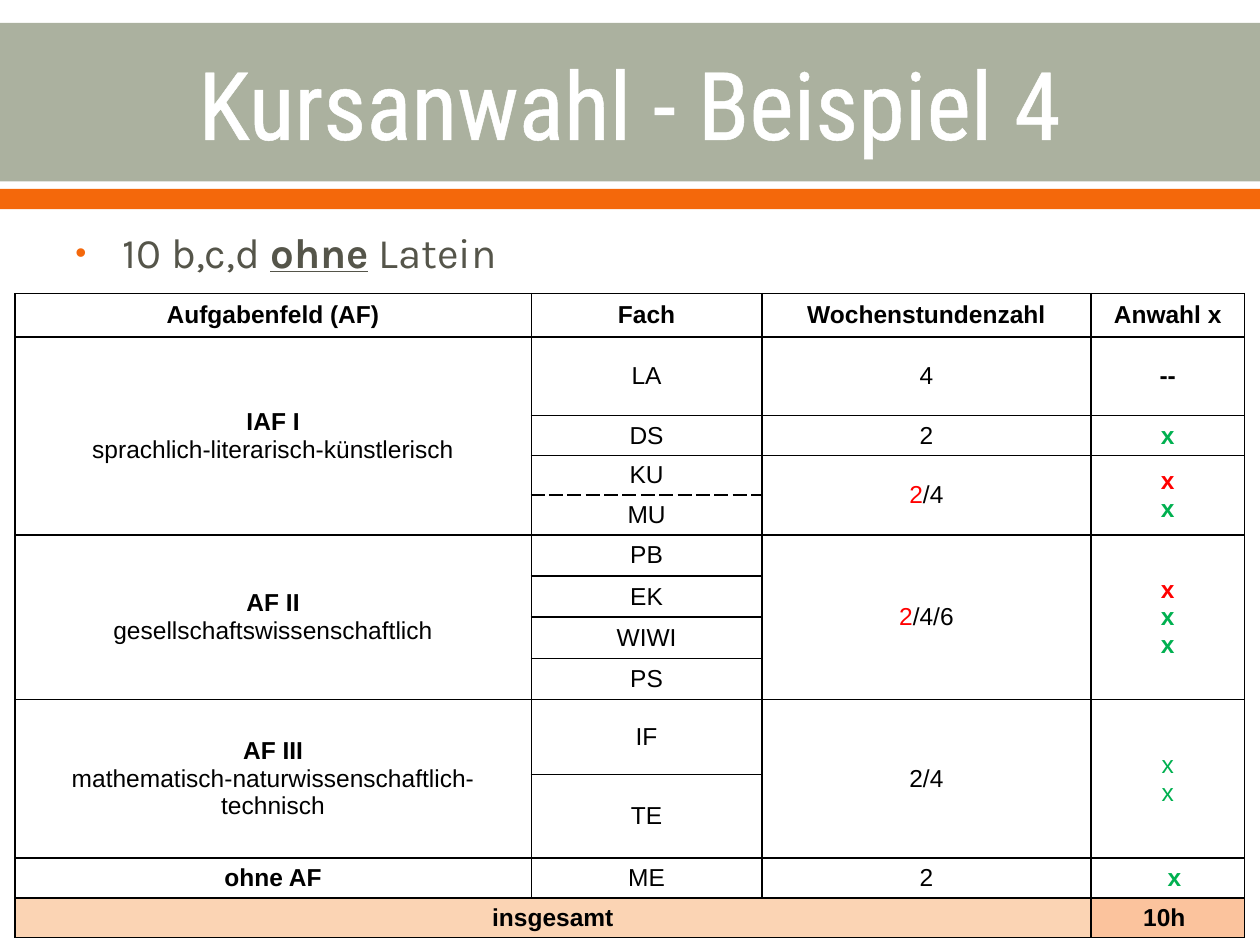
from dataclasses import dataclass

from lxml import etree
from pptx import Presentation
from pptx.dml.color import RGBColor
from pptx.enum.shapes import MSO_SHAPE
from pptx.enum.text import MSO_ANCHOR, PP_ALIGN
from pptx.oxml.ns import qn
from pptx.util import Cm, Pt

RECTANGLE = MSO_SHAPE.RECTANGLE
MIDDLE = MSO_ANCHOR.MIDDLE
CENTER = PP_ALIGN.CENTER


@dataclass(frozen=True)
class Theme:
    sage: str = "ABB19F"
    orange: str = "F4680B"
    white: str = "FFFFFF"
    olive: str = "55554A"
    black: str = "000000"
    red: str = "FF0000"
    green: str = "00B050"
    total_label: str = "FBD4B4"
    total_hours: str = "FBC39D"
    title_font: str = "Roboto Condensed"
    body_font: str = "Karla"
    table_font: str = "Arial"
    title_size: int = 54
    body_size: int = 24
    table_size: int = 14


THEME = Theme()


@dataclass(frozen=True)
class Part:
    text: str
    bold: bool = False
    color: str = THEME.black


@dataclass(frozen=True)
class Entry:
    """Table cell: lines of parts, with its span, fill and sideways nudge in cm."""
    row: int
    col: int
    lines: tuple
    rows: int = 1
    cols: int = 1
    fill: str = ""
    nudge: float = 0


def bold(text, color=THEME.black):
    return (Part(text, True, color),)


def plain(text, color=THEME.black):
    return (Part(text, False, color),)


def hours(required, options):
    return plain(required, THEME.red) + plain(options)


COLUMN_WIDTHS = [10.41, 4.65, 6.63, 3.1]
ROW_HEIGHTS = [0.87, 1.59] + [0.8] * 3 + [0.83] * 4 + [1.51, 1.69] + [0.8] * 2
HEADINGS = ["Aufgabenfeld (AF)", "Fach", "Wochenstundenzahl", "Anwahl x"]
SUBJECTS = ["LA", "DS", "KU", "MU", "PB", "EK", "WIWI", "PS", "IF", "TE", "ME"]
RED_X, GREEN_X = bold("x", THEME.red), bold("x", THEME.green)
LIGHT_X = plain("x", THEME.green)
DASHED_EDGES = {(3, 1, "B"), (4, 1, "T")}

ENTRIES = [
    *(Entry(0, col, (bold(name),)) for col, name in enumerate(HEADINGS)),
    *(Entry(row, 1, (plain(name),)) for row, name in enumerate(SUBJECTS, 1)),
    Entry(1, 0, (bold("IAF I"), plain("sprachlich-literarisch-künstlerisch")), rows=4),
    Entry(1, 2, (plain("4"),)),
    Entry(1, 3, (bold("--"),)),
    Entry(2, 2, (plain("2"),)),
    Entry(2, 3, (GREEN_X,)),
    Entry(3, 2, (hours("2", "/4"),), rows=2),
    Entry(3, 3, (RED_X, GREEN_X), rows=2),
    Entry(5, 0, (bold("AF II"), plain("gesellschaftswissenschaftlich")), rows=4),
    Entry(5, 2, (hours("2", "/4/6"),), rows=4),
    Entry(5, 3, (RED_X, GREEN_X, GREEN_X), rows=4),
    Entry(9, 0, (bold("AF III"), plain("mathematisch-naturwissenschaftlich-"),
                 plain("technisch")), rows=2),
    Entry(9, 2, (plain("2/4"),), rows=2),
    Entry(9, 3, (LIGHT_X, LIGHT_X), rows=2),
    Entry(11, 0, (bold("ohne AF"),)),
    Entry(11, 2, (plain("2"),)),
    Entry(11, 3, (GREEN_X,), nudge=0.27),
    Entry(12, 0, (bold("insgesamt"),), cols=3, fill=THEME.total_label),
    Entry(12, 3, (bold("10h"),), fill=THEME.total_hours, nudge=-0.14),
]


def add_part(paragraph, part, font_name, size):
    run = paragraph.add_run()
    run.text = part.text
    run.font.name = font_name
    run.font.size = Pt(size)
    run.font.bold = part.bold
    run.font.color.rgb = RGBColor.from_string(part.color)
    return run


def add_line_xml(parent, tag, position, color, points, dash="solid"):
    """Insert an outline or cell edge at the place the schema asks for."""
    line = etree.Element(qn(tag), w=str(Pt(points)))
    fill = etree.SubElement(line, qn("a:solidFill"))
    etree.SubElement(fill, qn("a:srgbClr"), val=color)
    etree.SubElement(line, qn("a:prstDash"), val=dash)
    parent.insert(position, line)


def add_band(slide, left, top, width, height, color):
    band = slide.shapes.add_shape(RECTANGLE, left, top, width, height)
    band.shadow.inherit = False
    band.fill.solid()
    band.fill.fore_color.rgb = RGBColor.from_string(color)
    band.line.fill.background()


def add_header(slide, left, top, width, height):
    add_band(slide, left, top, width, Cm(3.2), THEME.sage)
    add_band(slide, left, top + height - Cm(0.41), width, Cm(0.41), THEME.orange)
    title = slide.shapes.add_textbox(left + Cm(1.27), top + Cm(0.05),
                                     width - Cm(2.54), Cm(3.1)).text_frame
    title.word_wrap = True
    title.vertical_anchor = MIDDLE
    title.paragraphs[0].alignment = CENTER
    run = add_part(title.paragraphs[0],
                   Part("Kursanwahl - Beispiel 4", color=THEME.white),
                   THEME.title_font, THEME.title_size)
    add_line_xml(run.font._element, "a:ln", 0, THEME.white, 1.1)


def add_class_note(slide, left, top, width, height):
    note = slide.shapes.add_textbox(left, top, width, height).text_frame
    note.word_wrap = True
    paragraph = note.paragraphs[0]
    paragraph.space_before = Pt(THEME.body_size * 0.2)
    properties = paragraph._p.get_or_add_pPr()
    properties.set("marL", str(Cm(0.95)))
    properties.set("indent", str(-Cm(0.95)))
    bullet_color = etree.SubElement(properties, qn("a:buClr"))
    etree.SubElement(bullet_color, qn("a:srgbClr"), val=THEME.orange)
    etree.SubElement(properties, qn("a:buSzPct"), val="75000")
    etree.SubElement(properties, qn("a:buFont"), typeface="Arial")
    etree.SubElement(properties, qn("a:buChar"), char="•")
    for text, emphasis in (("10 b,c,d ", False), ("ohne", True), (" Latein", False)):
        run = add_part(paragraph, Part(text, emphasis, THEME.olive),
                       THEME.body_font, THEME.body_size)
        run.font.underline = emphasis


def fill_cell(cell, entry):
    cell.vertical_anchor = MIDDLE
    cell.margin_left = Cm(0.18 + max(entry.nudge, 0))
    cell.margin_right = Cm(0.18 + max(-entry.nudge, 0))
    cell.margin_top = cell.margin_bottom = 0
    if entry.fill:
        cell.fill.solid()
        cell.fill.fore_color.rgb = RGBColor.from_string(entry.fill)
    for index, line in enumerate(entry.lines):
        frame = cell.text_frame
        paragraph = frame.add_paragraph() if index else frame.paragraphs[0]
        paragraph.alignment = CENTER
        for part in line:
            add_part(paragraph, part, THEME.table_font, THEME.table_size)


def add_course_table(slide, left, top, width, height):
    table = slide.shapes.add_table(len(ROW_HEIGHTS), len(COLUMN_WIDTHS),
                                   left, top, width, height).table
    table.first_row = table.horz_banding = False
    for column, size in zip(table.columns, COLUMN_WIDTHS):
        column.width = Cm(size)
    for row, size in zip(table.rows, ROW_HEIGHTS):
        row.height = Cm(size)
    for row in range(len(ROW_HEIGHTS)):
        for col in range(len(COLUMN_WIDTHS)):
            cell = table.cell(row, col)
            cell.fill.background()
            properties = cell._tc.get_or_add_tcPr()
            for position, side in enumerate("LRTB"):
                dash = "dash" if (row, col, side) in DASHED_EDGES else "solid"
                add_line_xml(properties, f"a:ln{side}", position, THEME.black, 1, dash)
    for entry in ENTRIES:
        cell = table.cell(entry.row, entry.col)
        if entry.rows * entry.cols > 1:
            cell.merge(table.cell(entry.row + entry.rows - 1, entry.col + entry.cols - 1))
        fill_cell(cell, entry)


def main():
    deck = Presentation()
    deck.slide_width, deck.slide_height = Cm(25.4), Cm(19.05)
    slide = deck.slides.add_slide(deck.slide_layouts[6])
    add_header(slide, 0, Cm(0.46), deck.slide_width, Cm(3.76))
    add_class_note(slide, Cm(1.27), Cm(4.45), Cm(22.86), Cm(1.47))
    add_course_table(slide, Cm(0.3), Cm(5.92), Cm(sum(COLUMN_WIDTHS)), Cm(sum(ROW_HEIGHTS)))
    deck.save("out.pptx")


if __name__ == "__main__":
    main()
